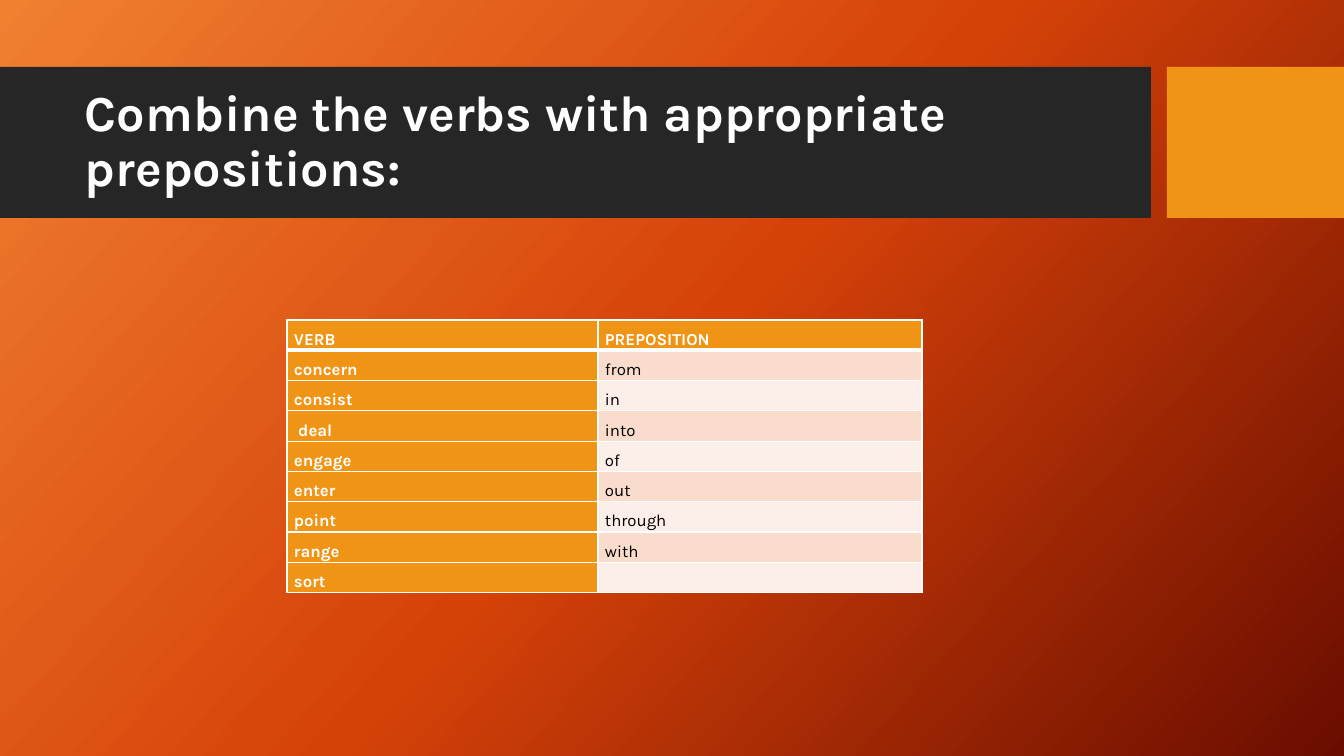
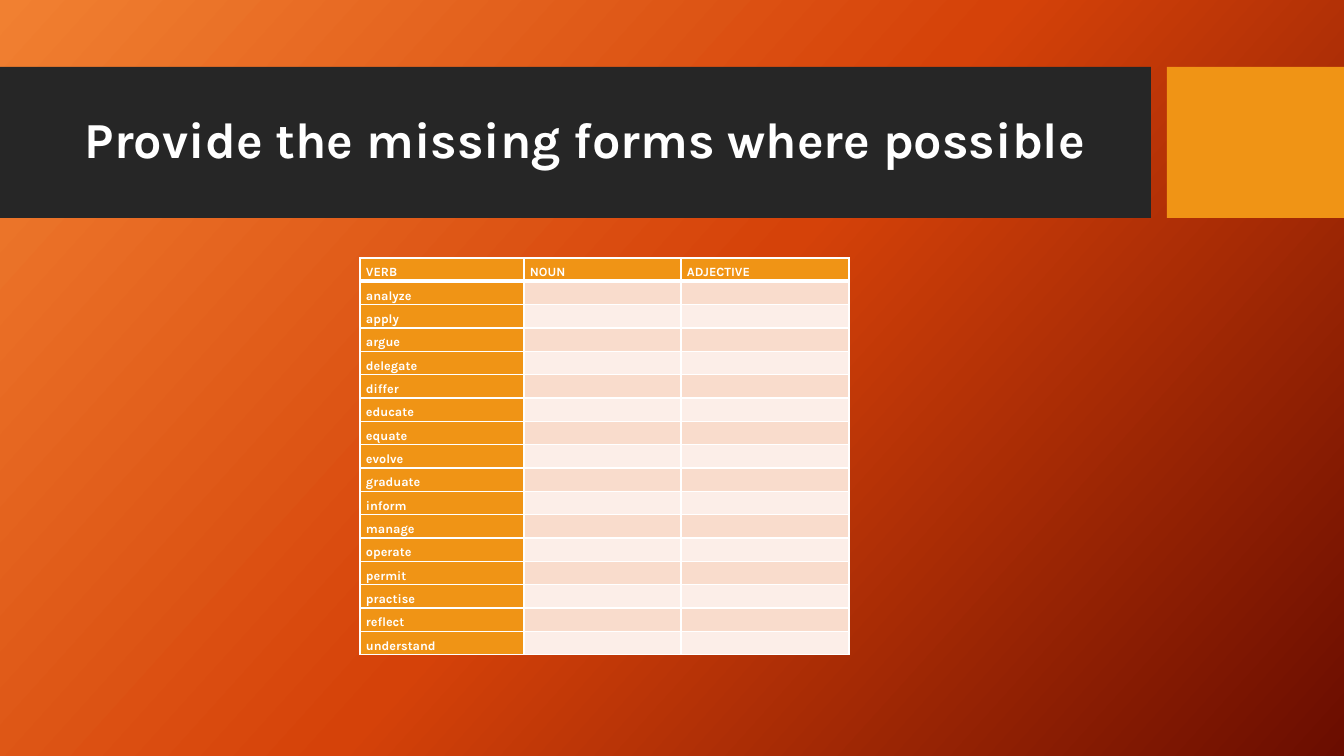
"""Build two vocabulary exercise slides, each a title band above a table."""
import copy

import pptx
import pptx.dml.color
import pptx.enum.shapes
import pptx.enum.text
import pptx.oxml.ns
import pptx.util
from lxml import etree

PX = 12192000 / 1344
FONT = "Karla"
COLORS = {
    "white": "FFFFFF",
    "black": "000000",
    "band": "262626",
    "accent": "F09415",
    "stripe_dark": "F9DCCC",
    "stripe_light": "FCEEE8",
}
BACKGROUND = [(0, "F18031"), (0.5, "D54209"), (1, "6A0D00")]
BANDS = [((0, 67, 1151, 151), "band"), ((1167, 67, 177, 151), "accent")]
TITLE_AREA = (75, 83, 1059, 119)

VERBS = ["concern", "consist", " deal", "engage", "enter", "point", "range", "sort"]
PREPOSITIONS = ["from", "in", "into", "of", "out", "through", "with", ""]
FORM_VERBS = [
    "analyze", "apply", "argue", "delegate", "differ", "educate", "equate", "evolve",
    "graduate", "inform", "manage", "operate", "permit", "practise", "reflect", "understand",
]
SLIDES = [
    {
        "title": "Combine the verbs with appropriate prepositions:",
        "rows": [("VERB", "PREPOSITION"), *zip(VERBS, PREPOSITIONS)],
        "area": (287, 320, 635, 266),
        "columns": (311, 324),
        "size": 12,
        "inset": 7,
    },
    {
        "title": "Provide the missing forms where possible",
        "rows": [("VERB", "NOUN", "ADJECTIVE"), *((verb, "", "") for verb in FORM_VERBS)],
        "area": (360, 258, 489, 397),
        "columns": (164, 157, 168),
        "size": 9,
        "inset": 6,
    },
]


def px(*lengths):
    """Turn pixel lengths into EMU."""
    return [pptx.util.Emu(round(length * PX)) for length in lengths]


def write(para, text, size, color, bold, spacing):
    """Put one formatted span of text into a paragraph."""
    para.line_spacing = spacing
    if not text:
        etree.SubElement(para._p, pptx.oxml.ns.qn("a:endParaRPr"), sz=str(size * 100))
        return
    span = para.add_run()
    span.text = text
    formats = {"name": FONT, "size": pptx.util.Pt(size), "bold": bold}
    for name, value in formats.items():
        setattr(span.font, name, value)
    span.font.color.rgb = pptx.dml.color.RGBColor.from_string(COLORS[color])


deck = pptx.Presentation()
deck.slide_width, deck.slide_height = px(1344, 756)

for content in SLIDES:
    page = deck.slides.add_slide(deck.slide_layouts[6])

    backdrop = page.background.fill
    backdrop.gradient()
    backdrop.gradient_angle = 318
    stop_list = page.element.find(".//" + pptx.oxml.ns.qn("a:gsLst"))
    stop_list.append(copy.deepcopy(stop_list[0]))
    for stop, (position, color) in zip(backdrop.gradient_stops, BACKGROUND):
        stop.position = position
        stop.color.rgb = pptx.dml.color.RGBColor.from_string(color)

    for area, color in BANDS:
        band = page.shapes.add_shape(pptx.enum.shapes.MSO_SHAPE.RECTANGLE, *px(*area))
        band.shadow.inherit = False
        band.fill.solid()
        band.fill.fore_color.rgb = pptx.dml.color.RGBColor.from_string(COLORS[color])
        band.line.fill.background()

    title_box = page.shapes.add_textbox(*px(*TITLE_AREA))
    title_box.text_frame.word_wrap = True
    title_box.text_frame.vertical_anchor = pptx.enum.text.MSO_ANCHOR.MIDDLE
    write(title_box.text_frame.paragraphs[0], content["title"], 36, "white", True, 0.9)

    rows = content["rows"]
    table = page.shapes.add_table(len(rows), len(rows[0]), *px(*content["area"])).table
    table.first_col = True
    for column, width in zip(table.columns, px(*content["columns"])):
        column.width = width

    for row_index, row in enumerate(rows):
        for column_index, text in enumerate(row):
            cell = table.cell(row_index, column_index)
            heading = row_index == 0 or column_index == 0
            inset, none = px(content["inset"], 0)
            margins = {"left": inset, "right": inset, "top": none, "bottom": none}
            for side, margin in margins.items():
                setattr(cell, f"margin_{side}", margin)

            borders = {"L": 1, "R": 1, "T": 3 if row_index == 1 else 1, "B": 3 if row_index == 0 else 1}
            properties = cell._tc.get_or_add_tcPr()
            for side, width in borders.items():
                border = etree.SubElement(
                    properties, pptx.oxml.ns.qn(f"a:ln{side}"), w=str(pptx.util.Pt(width))
                )
                paint = etree.SubElement(border, pptx.oxml.ns.qn("a:solidFill"))
                etree.SubElement(paint, pptx.oxml.ns.qn("a:srgbClr"), val=COLORS["white"])

            stripe = "stripe_dark" if row_index % 2 else "stripe_light"
            cell.fill.solid()
            cell.fill.fore_color.rgb = pptx.dml.color.RGBColor.from_string(
                COLORS["accent" if heading else stripe]
            )
            color = "white" if heading else "black"
            write(cell.text_frame.paragraphs[0], text, content["size"], color, heading, 1.5)

deck.save("out.pptx")
